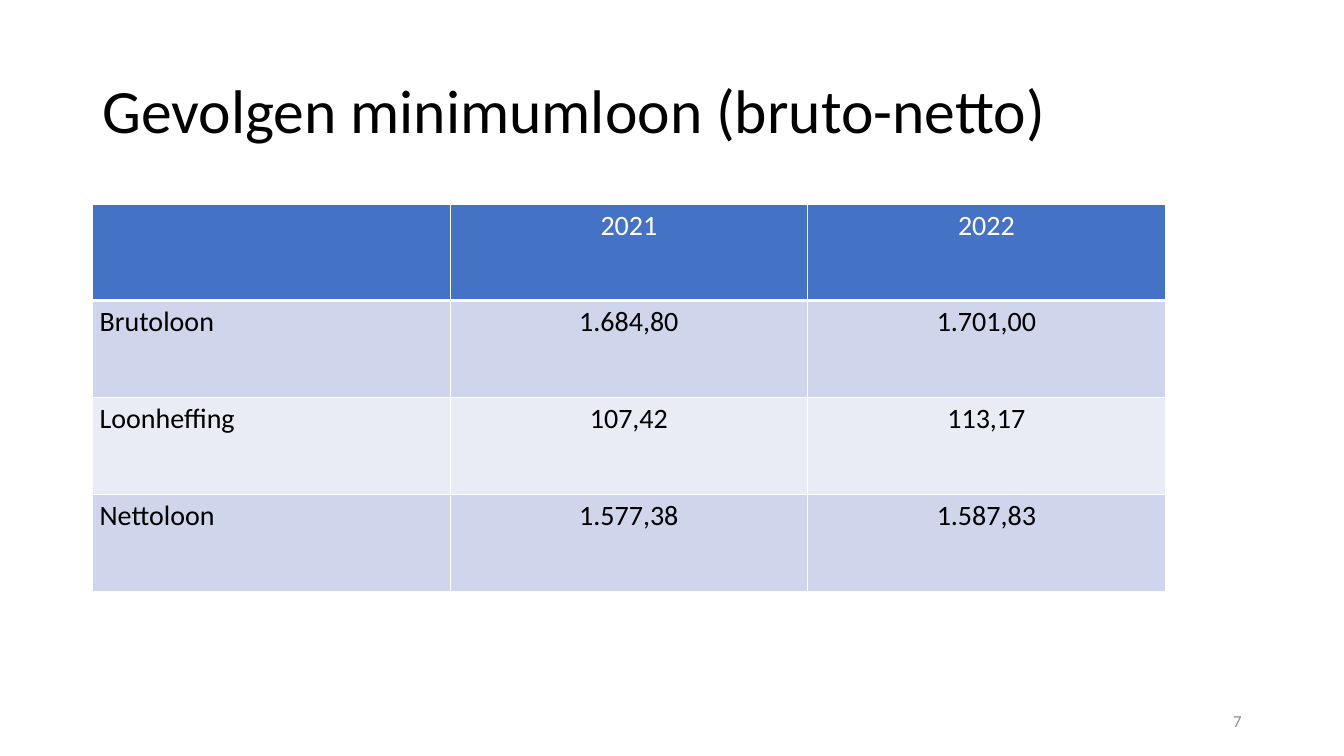
from lxml import etree
from pptx import Presentation
from pptx.dml.color import RGBColor
from pptx.enum import text
from pptx.oxml import ns
from pptx.util import Pt

COLORS = {
    "black": "000000",
    "white": "FFFFFF",
    "header": "4472C4",
    "band_dark": "CFD5EA",
    "band_light": "E9EBF5",
    "number": "8C8C8C",
}
ROWS = [
    ("", "2021", "2022"),
    ("Brutoloon", "1.684,80", "1.701,00"),
    ("Loonheffing", "107,42", "113,17"),
    ("Nettoloon", "1.577,38", "1.587,83"),
]
COLUMN_WIDTH = 255.4
HEADER_HEIGHT = 68.4
ROW_HEIGHT = 69.3


def rgb(name):
    return RGBColor.from_string(COLORS[name])


def style_paragraph(para, size, color, align):
    para.alignment = align
    para.font.name = "Calibri"
    para.font.size = Pt(size)
    para.font.bold = False
    para.font.color.rgb = rgb(color)


def add_text(page, bounds, words, size, color, align):
    box = page.shapes.add_textbox(*map(Pt, bounds))
    frame = box.text_frame
    frame.word_wrap = True
    frame.vertical_anchor = text.MSO_ANCHOR.MIDDLE
    para = frame.paragraphs[0]
    para.text = words
    style_paragraph(para, size, color, align)
    return para


def add_borders(cell, bottom_width):
    properties = cell._tc.get_or_add_tcPr()
    for side, width in zip("LRTB", (1, 1, 1, bottom_width)):
        line = etree.SubElement(properties, ns.qn(f"a:ln{side}"), w=str(Pt(width)))
        fill = etree.SubElement(line, ns.qn("a:solidFill"))
        etree.SubElement(fill, ns.qn("a:srgbClr"), val=COLORS["white"])


def fill_cell(cell, words, row, column):
    is_header = row == 0
    cell.margin_left = cell.margin_right = Pt(5)
    cell.margin_top = cell.margin_bottom = Pt(2.9)
    add_borders(cell, 3 if is_header else 1)
    cell.fill.solid()
    band = "band_dark" if row % 2 else "band_light"
    cell.fill.fore_color.rgb = rgb("header" if is_header else band)
    para = cell.text_frame.paragraphs[0]
    if words:
        para.text = words
    align = text.PP_ALIGN.CENTER if column else text.PP_ALIGN.LEFT
    style_paragraph(para, 20, "white" if is_header else "black", align)


def add_wage_table(page, left, top):
    column_count = len(ROWS[0])
    width = COLUMN_WIDTH * column_count
    height = HEADER_HEIGHT + ROW_HEIGHT * (len(ROWS) - 1)
    table = page.shapes.add_table(
        len(ROWS), column_count, Pt(left), Pt(top), Pt(width), Pt(height)
    ).table
    for column in table.columns:
        column.width = Pt(COLUMN_WIDTH)
    for row, values in enumerate(ROWS):
        table.rows[row].height = Pt(ROW_HEIGHT if row else HEADER_HEIGHT)
        for column, words in enumerate(values):
            fill_cell(table.cell(row, column), words, row, column)


def main():
    deck = Presentation()
    deck.slide_width, deck.slide_height = Pt(960), Pt(540)
    page = deck.slides.add_slide(deck.slide_layouts[6])
    title = add_text(
        page, (66, 28.8, 828, 104.4), "Gevolgen minimumloon (bruto-netto)",
        44, "black", text.PP_ALIGN.LEFT,
    )
    title.line_spacing = 0.9
    add_wage_table(page, 66.2, 146.2)
    add_text(page, (678, 500.4, 216, 28.8), "7", 12, "number", text.PP_ALIGN.RIGHT)
    deck.save("out.pptx")


if __name__ == "__main__":
    main()
